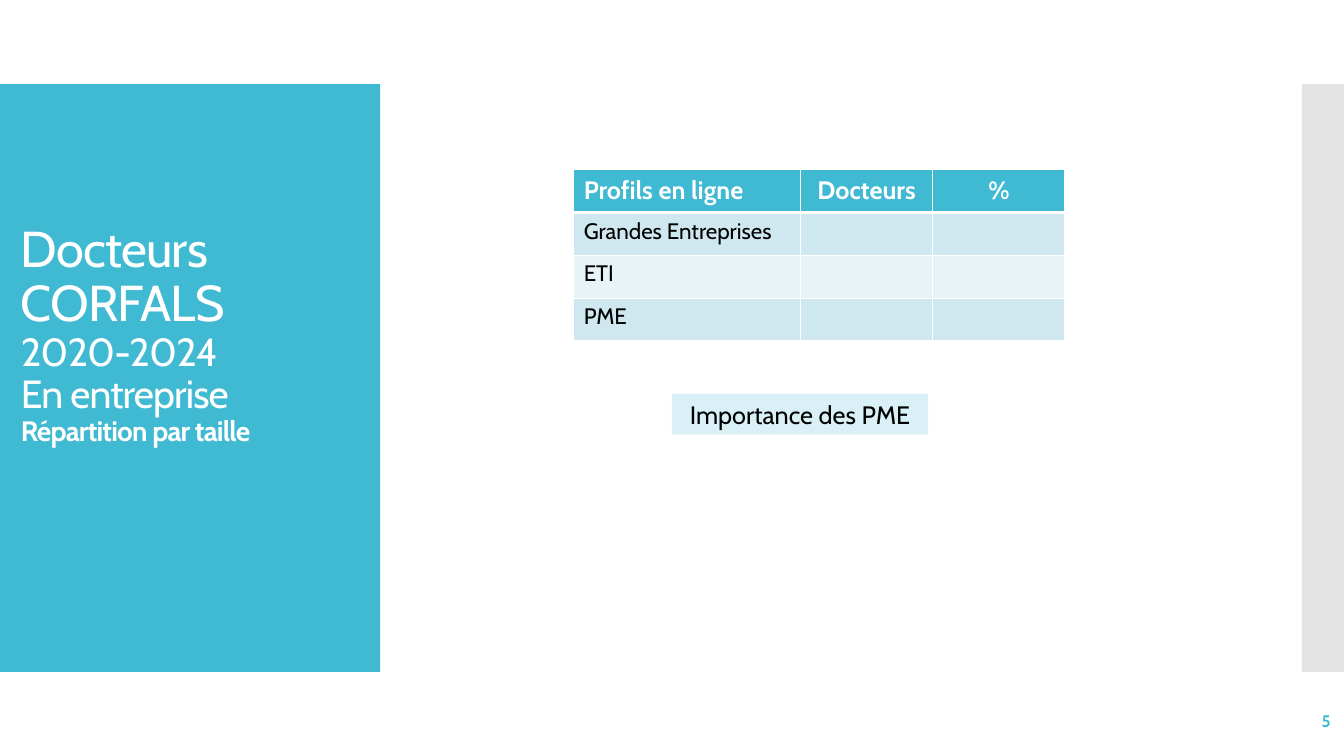
from dataclasses import dataclass
from typing import Optional

from pptx import Presentation
from pptx import util as u
from pptx.dml.color import RGBColor
from pptx.enum import shapes, text
from pptx.oxml import ns, xmlchemy


@dataclass(frozen=True)
class Theme:
    font: str = "Cabin"
    accent: str = "40BAD2"
    side: str = "C8C8C8"
    callout: str = "D9F1F6"
    bands: tuple[str, str] = ("CFE7EE", "E8F3F7")
    light: str = "FFFFFF"
    dark: str = "000000"
    title: int = 36
    subtitle: int = 28
    detail: int = 20
    body: int = 18
    cell: int = 16
    number: int = 12


@dataclass(frozen=True)
class Area:
    """A place on the grid: left and width in columns, top and height in rows."""
    left: float
    top: float
    width: float
    height: float


@dataclass(frozen=True)
class Line:
    words: str
    size: int
    color: str
    bold: bool = False
    align: text.PP_ALIGN = text.PP_ALIGN.LEFT
    tracking: Optional[int] = None
    spacing: Optional[float] = None


THEME = Theme()
COLUMNS, ROWS = 160, 90
LEFT, CENTER, RIGHT = text.PP_ALIGN.LEFT, text.PP_ALIGN.CENTER, text.PP_ALIGN.RIGHT

deck = Presentation()
deck.slide_width, deck.slide_height = u.Inches(13.33), u.Inches(7.5)
page = deck.slides.add_slide(deck.slide_layouts[6])


# Grid and text helpers
def across(columns: float) -> int:
    return round(deck.slide_width * columns / COLUMNS)


def down(rows: float) -> int:
    return round(deck.slide_height * rows / ROWS)


def place(area: Area) -> tuple[int, int, int, int]:
    return across(area.left), down(area.top), across(area.width), down(area.height)


def write(frame, lines: list[Line]) -> None:
    for index, line in enumerate(lines):
        para = frame.add_paragraph() if index else frame.paragraphs[0]
        para.alignment = line.align
        para.line_spacing = line.spacing
        span = para.add_run()
        span.text = line.words
        para.font.name, para.font.size, para.font.bold = THEME.font, u.Pt(line.size), line.bold
        para.font.color.rgb = RGBColor.from_string(line.color)
        if line.tracking is not None:
            span.font._element.set("spc", str(line.tracking))


def add_panel(area: Area, color: str, opacity: Optional[int] = None):
    panel = page.shapes.add_shape(shapes.MSO_SHAPE.RECTANGLE, *place(area))
    panel.shadow.inherit = False
    panel.fill.solid()
    panel.fill.fore_color.rgb = RGBColor.from_string(color)
    panel.line.fill.background()
    if opacity is not None:
        tone = panel._element.spPr.find(ns.qn("a:solidFill"))[0]
        alpha = xmlchemy.OxmlElement("a:alpha")
        alpha.set("val", str(opacity * 1000))
        tone.append(alpha)
    return panel


def add_text(area: Area, lines: list[Line]) -> None:
    frame = page.shapes.add_textbox(*place(area)).text_frame
    frame.word_wrap = True
    frame.vertical_anchor = text.MSO_ANCHOR.MIDDLE
    write(frame, lines)


# Table helpers
def add_border(cell, side: str, points: int) -> None:
    edge = xmlchemy.OxmlElement(f"a:{side}")
    edge.set("w", str(u.Pt(points)))
    fill = xmlchemy.OxmlElement("a:solidFill")
    tone = xmlchemy.OxmlElement("a:srgbClr")
    tone.set("val", THEME.light)
    fill.append(tone)
    edge.append(fill)
    cell._tc.get_or_add_tcPr().append(edge)


def style_cell(cell, color: str, top: int, bottom: int) -> None:
    for side, points in (("lnL", 1), ("lnR", 1), ("lnT", top), ("lnB", bottom)):
        add_border(cell, side, points)
    cell.fill.solid()
    cell.fill.fore_color.rgb = RGBColor.from_string(color)


def add_size_table(area: Area, widths: list[float], headers: list[str], labels: list[str]) -> None:
    table = page.shapes.add_table(len(labels) + 1, len(headers), *place(area)).table
    for column, width in zip(table.columns, widths):
        column.width = across(width)
    for column, header in enumerate(headers):
        cell = table.cell(0, column)
        style_cell(cell, THEME.accent, 1, 3)
        align = CENTER if column else LEFT
        write(cell.text_frame, [Line(header, THEME.body, THEME.light, True, align)])
    for row, label in enumerate(labels, start=1):
        for column in range(len(headers)):
            style_cell(table.cell(row, column), THEME.bands[(row - 1) % 2], 3 if row == 1 else 1, 1)
        write(table.cell(row, 0).text_frame, [Line(label, THEME.cell, THEME.dark)])


def build() -> None:
    # Side panels
    add_panel(Area(0, 10, 45.25, 70), THEME.accent)
    add_panel(Area(155, 10, 5, 70), THEME.side, opacity=50)

    # Title
    headings = [
        ("Docteurs CORFALS", THEME.title, False),
        ("2020-2024", THEME.subtitle, False),
        ("En entreprise", THEME.subtitle, False),
        ("Répartition par taille", THEME.detail, True),
    ]
    add_text(Area(1.3, 14.75, 45.25, 50.4), [
        Line(words, size, THEME.light, bold, tracking=-60, spacing=0.9)
        for words, size, bold in headings
    ])

    # Breakdown by company size
    add_size_table(
        Area(68.3, 20.2, 58.5, 20.4), [27, 15.75, 15.75],
        ["Profils en ligne", "Docteurs", "%"],
        ["Grandes Entreprises", "ETI", "PME"],
    )

    # Slide number
    add_text(Area(139.6, 83.4, 20, 4.8),
             [Line("5", THEME.number, THEME.accent, True, RIGHT)])

    # Key message
    callout = add_panel(Area(80, 46.9, 30.5, 4.85), THEME.callout)
    write(callout.text_frame, [Line("Importance des PME", THEME.body, THEME.dark, align=CENTER)])

    deck.save("out.pptx")


if __name__ == "__main__":
    build()
